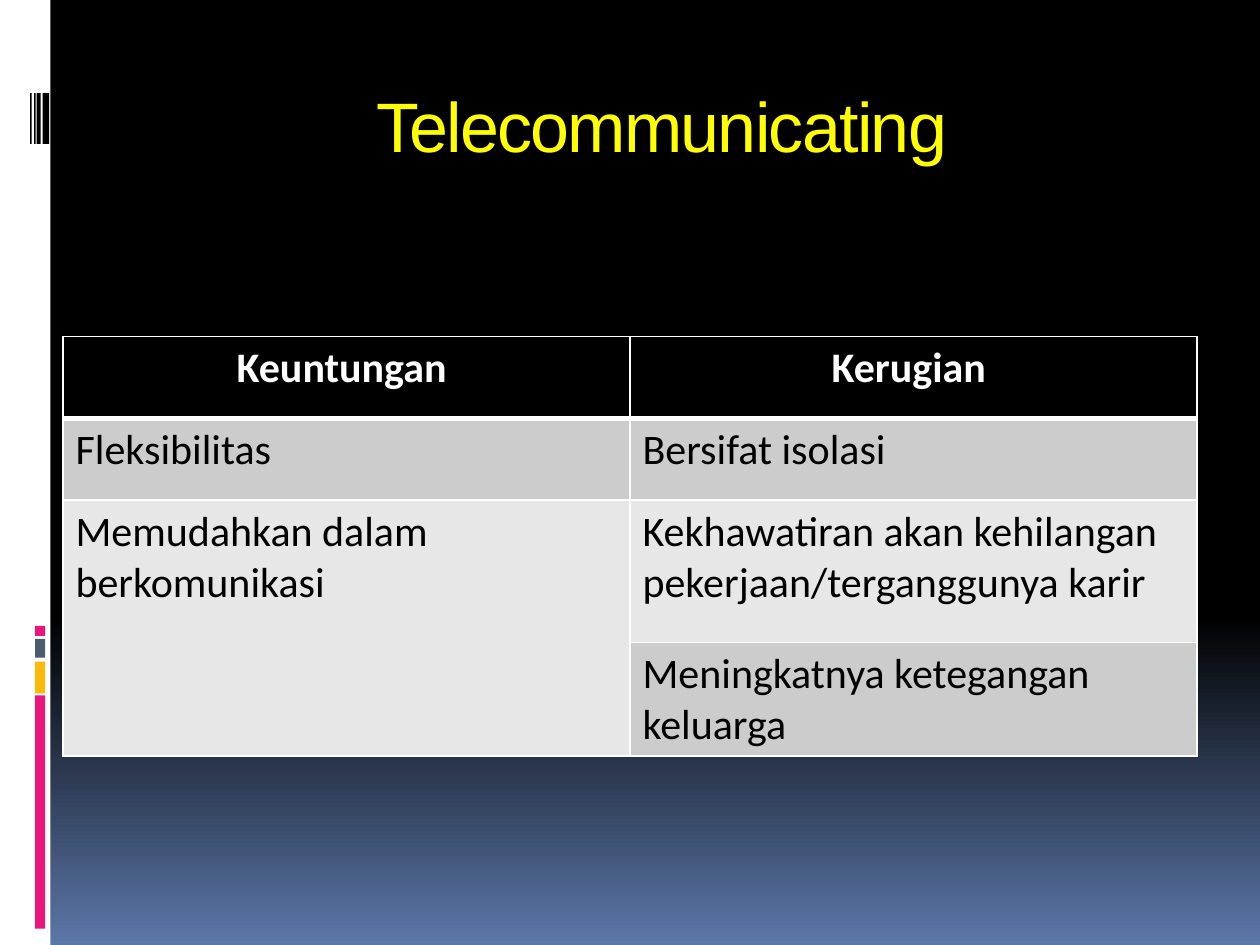
import copy

import pptx
import pptx.dml.color
import pptx.enum.shapes
import pptx.enum.text
import pptx.oxml
import pptx.oxml.ns
import pptx.util

Cm = pptx.util.Cm
Pt = pptx.util.Pt
Align = pptx.enum.text.PP_ALIGN

COLOURS = {
    "black": "000000",
    "white": "FFFFFF",
    "yellow": "FFFF00",
    "pink": "EA157A",
    "amber": "FEB80A",
    "slate": "4E5B6F",
    "blue": "5B77A8",
    "band dark": "CCCCCC",
    "band light": "E7E7E7",
}

TITLE = "Telecommunicating"
HEADER = ["Keuntungan ", "Kerugian "]
BODY = [
    ["Fleksibilitas", "Bersifat isolasi"],
    ["Memudahkan dalam berkomunikasi",
     "Kekhawatiran akan kehilangan pekerjaan/terganggunya karir"],
    ["", "Meningkatnya ketegangan keluarga"],
]
ROW_HEIGHTS = [1.65, 1.65, 2.87, 2.29]
COLUMN_WIDTH = 11.43

# Side decoration, in centimetres
SIDE_BAR = (0, 0, 1.02, 19.05)
BLOCKS = [  # top, height, colour
    (14.02, 4.7, "pink"),
    (13.34, 0.64, "amber"),
    (12.88, 0.38, "slate"),
    (12.62, 0.2, "pink"),
]
STRIPES = [(0.86, 0.13), (0.74, 0.08), (0.69, 0.03), (0.61, 0.03)]  # left, width


def rgb(name):
    return pptx.dml.color.RGBColor.from_string(COLOURS[name])


def paint_background(page):
    fill = page.background.fill
    fill.gradient()
    fill.gradient_angle = 270
    first, last = fill.gradient_stops
    first.color.rgb = rgb("black")
    first.position = 0
    last.color.rgb = rgb("blue")
    last.position = 1
    stop_list = page.background._cSld.find(".//" + pptx.oxml.ns.qn("a:gsLst"))
    middle = copy.deepcopy(stop_list[0])
    middle.set("pos", "65000")
    stop_list.insert(1, middle)


def add_bar(page, left, top, width, height, colour):
    bar = page.shapes.add_shape(
        pptx.enum.shapes.MSO_SHAPE.RECTANGLE,
        Cm(left), Cm(top), Cm(width), Cm(height))
    bar.shadow.inherit = False
    bar.fill.solid()
    bar.fill.fore_color.rgb = rgb(colour)
    bar.line.fill.background()


def add_title(page):
    box = page.shapes.add_textbox(Cm(2.54), Cm(1.42), Cm(21.59), Cm(2.54))
    frame = box.text_frame
    frame.word_wrap = True
    frame.margin_top = Cm(0.25)
    para = frame.paragraphs[0]
    para.alignment = Align.CENTER
    span = para.add_run()
    span.text = TITLE
    span.font.name = "Arial"
    span.font.size = Pt(40)
    span.font.color.rgb = rgb("yellow")
    span.font._element.set("spc", "-100")


def set_borders(cell, widths):
    """Draw white borders; widths maps the edges L, R, T and B to points."""
    properties = cell._tc.get_or_add_tcPr()
    for position, (edge, width) in enumerate(widths.items()):
        line = pptx.oxml.parse_xml(
            f'<a:ln{edge} {pptx.oxml.ns.nsdecls("a")} w="{Pt(width)}">'
            f'<a:solidFill><a:srgbClr val="{COLOURS["white"]}"/></a:solidFill>'
            f'</a:ln{edge}>')
        properties.insert(position, line)


def add_comparison(page):
    rows = [HEADER] + BODY
    table = page.shapes.add_table(
        len(rows), len(HEADER), Cm(1.27), Cm(6.78),
        Cm(COLUMN_WIDTH * len(HEADER)), Cm(sum(ROW_HEIGHTS))).table
    for column in table.columns:
        column.width = Cm(COLUMN_WIDTH)
    for number, texts in enumerate(rows):
        table.rows[number].height = Cm(ROW_HEIGHTS[number])
        is_header = number == 0
        band = "band dark" if number % 2 else "band light"
        for cell, text in zip(table.rows[number].cells, texts):
            cell.text = text
            cell.fill.solid()
            cell.fill.fore_color.rgb = rgb("black" if is_header else band)
            set_borders(cell, {"L": 1, "R": 1,
                               "T": 3 if number == 1 else 1,
                               "B": 3 if is_header else 1})
            para = cell.text_frame.paragraphs[0]
            para.alignment = Align.CENTER if is_header else Align.LEFT
            para.font.name = "Calibri"
            para.font.size = Pt(24)
            para.font.bold = is_header
            para.font.color.rgb = rgb("white" if is_header else "black")
    table.cell(2, 0).merge(table.cell(3, 0))


def main():
    deck = pptx.Presentation()
    deck.slide_width, deck.slide_height = Cm(25.4), Cm(19.05)
    page = deck.slides.add_slide(deck.slide_layouts[6])
    paint_background(page)
    add_bar(page, *SIDE_BAR, "white")
    for top, height, colour in BLOCKS:
        add_bar(page, 0.71, top, 0.2, height, colour)
    for left, width in STRIPES:
        add_bar(page, left, 1.88, width, 1.02, "black")
    add_title(page)
    add_comparison(page)
    deck.save("out.pptx")


if __name__ == "__main__":
    main()
